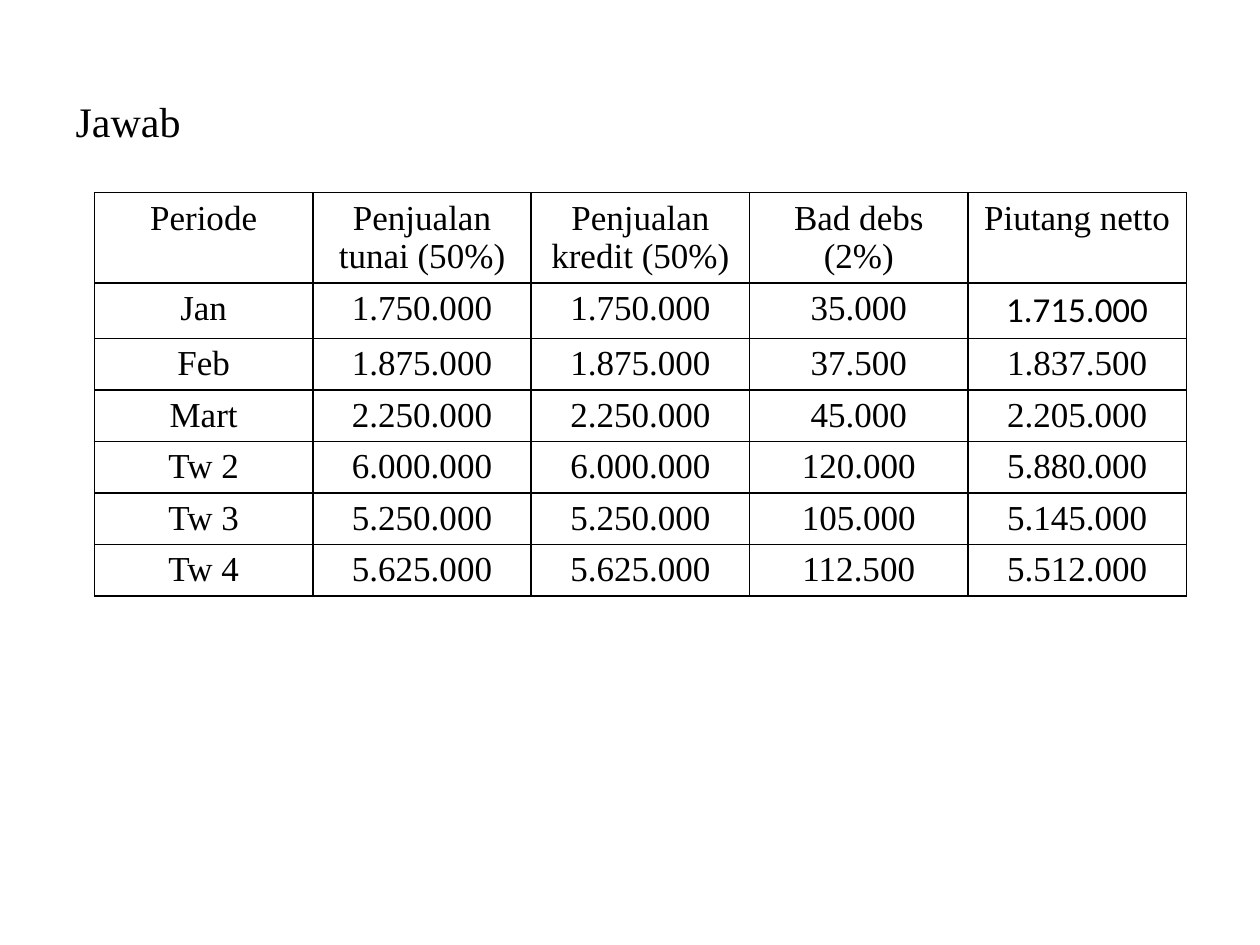
from dataclasses import dataclass

from lxml import etree
from pptx import Presentation
from pptx.dml.color import RGBColor
from pptx.enum.text import MSO_ANCHOR, PP_ALIGN
from pptx.oxml.ns import qn
from pptx.util import Pt

TOP = MSO_ANCHOR.TOP
LEFT, CENTER = PP_ALIGN.LEFT, PP_ALIGN.CENTER


@dataclass(frozen=True)
class Theme:
    ink: str = "000000"
    serif: str = "Times New Roman"
    sans: str = "Calibri"
    head: int = 24
    cell: int = 20
    line: int = 1


THEME = Theme()

ROWS = [
    ["Periode", "Penjualan tunai (50%)", "Penjualan kredit (50%)", "Bad debs (2%)", "Piutang netto"],
    ["Jan", "1.750.000", "1.750.000", "35.000", "1.715.000"],
    ["Feb", "1.875.000", "1.875.000", "37.500", "1.837.500"],
    ["Mart", "2.250.000", "2.250.000", "45.000", "2.205.000"],
    ["Tw 2", "6.000.000", "6.000.000", "120.000", "5.880.000"],
    ["Tw 3", "5.250.000", "5.250.000", "105.000", "5.145.000"],
    ["Tw 4", "5.625.000", "5.625.000", "112.500", "5.512.000"],
]
SANS_CELL = (1, 4)
HEIGHTS = [51.5, 31.6] + [29.4] * 5


def style(para, size, face, align):
    para.alignment = align
    para.space_before = Pt(0)
    for run in para.runs:
        run.font.size = Pt(size)
        run.font.name = face
        run.font.color.rgb = RGBColor.from_string(THEME.ink)


def border(cell):
    """Draw a thin line on all four sides of a cell."""
    props = cell._tc.get_or_add_tcPr()
    for i, side in enumerate(("a:lnL", "a:lnR", "a:lnT", "a:lnB")):
        line = etree.Element(qn(side), w=str(Pt(THEME.line)))
        fill = etree.SubElement(line, qn("a:solidFill"))
        etree.SubElement(fill, qn("a:srgbClr"), val=THEME.ink)
        props.insert(i, line)


def add_head(slide, x, y, w, h):
    """Fill the body placeholder with the one-word heading."""
    body = slide.placeholders[1]
    body.left, body.top, body.width, body.height = Pt(x), Pt(y), Pt(w), Pt(h)
    frame = body.text_frame
    frame.text = "Jawab"
    frame.vertical_anchor = TOP
    frame.margin_top = Pt(6.4)
    para = frame.paragraphs[0]
    props = para._p.get_or_add_pPr()
    props.set("marL", str(Pt(27)))
    props.set("indent", str(Pt(-27)))
    etree.SubElement(props, qn("a:buNone"))
    style(para, THEME.head, THEME.serif, LEFT)


def add_grid(slide, x, y, w):
    """Place the receivables table with equal columns."""
    count = len(ROWS[0])
    shape = slide.shapes.add_table(len(ROWS), count, Pt(x), Pt(y), Pt(w), Pt(sum(HEIGHTS)))
    table = shape.table
    table.first_row = table.horz_banding = False
    for col in table.columns:
        col.width = Pt(w / count)
    for r, (row, high) in enumerate(zip(ROWS, HEIGHTS)):
        table.rows[r].height = Pt(high)
        for c, text in enumerate(row):
            cell = table.cell(r, c)
            cell.text = text
            cell.fill.background()
            border(cell)
            face = THEME.sans if (r, c) == SANS_CELL else THEME.serif
            style(cell.text_frame.paragraphs[0], THEME.cell, face, CENTER)


def main():
    deck = Presentation()
    deck.slide_width, deck.slide_height = Pt(720), Pt(540)
    # The heading sits in the body, so the title goes
    slide = deck.slides.add_slide(deck.slide_layouts[1])
    title = slide.shapes.title._element
    title.getparent().remove(title)
    add_head(slide, 36, 48, 648, 434)
    add_grid(slide, 54, 110, 624)
    deck.save("out.pptx")


if __name__ == "__main__":
    main()
